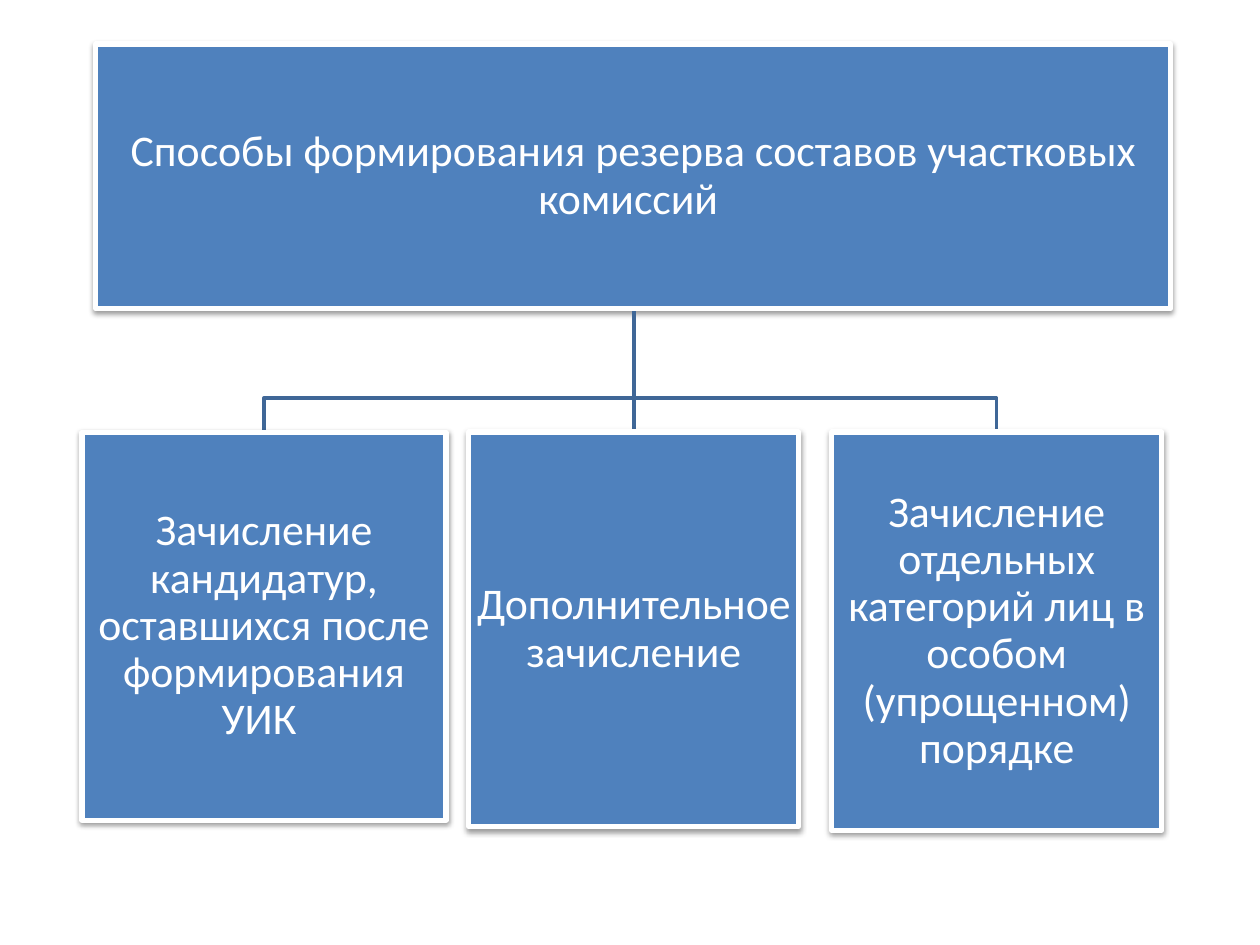
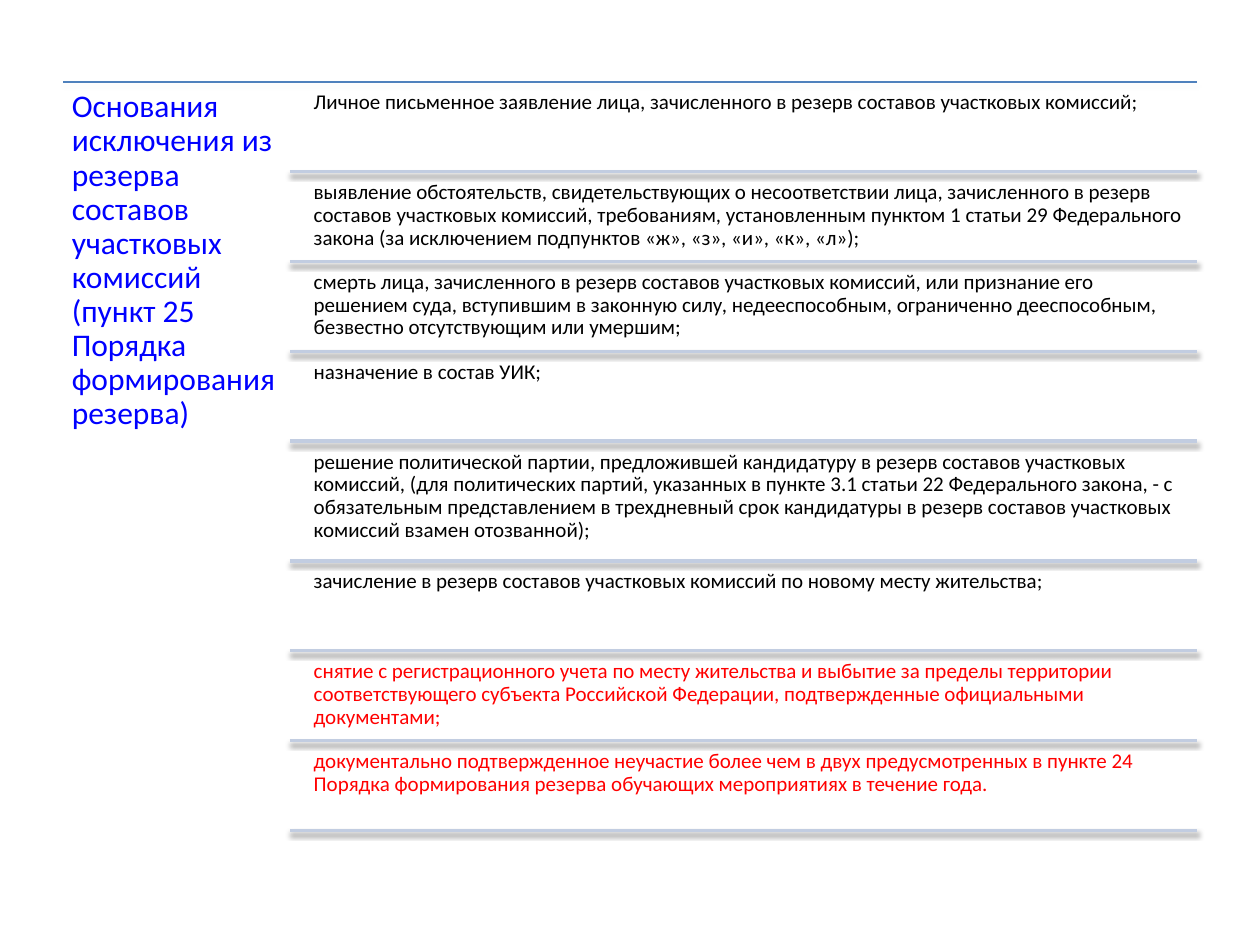
"""Build two slides on forming and leaving the reserve of precinct commissions."""
from lxml import etree
from pptx import Presentation
from pptx.dml.color import RGBColor
from pptx.enum.shapes import MSO_CONNECTOR, MSO_SHAPE
from pptx.enum.text import MSO_ANCHOR, MSO_AUTO_SIZE, PP_ALIGN
from pptx.oxml.ns import qn
from pptx.util import Inches, Pt

STRAIGHT = MSO_CONNECTOR.STRAIGHT
RECTANGLE = MSO_SHAPE.RECTANGLE
TOP, MIDDLE = MSO_ANCHOR.TOP, MSO_ANCHOR.MIDDLE
LEFT, CENTER = PP_ALIGN.LEFT, PP_ALIGN.CENTER
NO_AUTOFIT = MSO_AUTO_SIZE.NONE

FONT = "Calibri"
TITLE_ONLY = 5
COLORS = {
    "box": "4F81BD",
    "branch": "3F6797",
    "rule": "C2CDE1",
    "white": "FFFFFF",
    "black": "000000",
    "blue": "0000FF",
    "red": "FF0000",
}


def add_shadow(shape):
    effects = etree.SubElement(shape._element.spPr, qn("a:effectLst"))
    shadow = etree.SubElement(
        effects, qn("a:outerShdw"), blurRad=str(Pt(3.1)), dist=str(Pt(1.6)),
        dir="5400000", rotWithShape="0")
    color = etree.SubElement(shadow, qn("a:srgbClr"), val=COLORS["black"])
    etree.SubElement(color, qn("a:alpha"), val="38000")


def write_text(shape, text, size, color, align, anchor, margin):
    frame = shape.text_frame
    frame.word_wrap = True
    frame.auto_size = NO_AUTOFIT
    frame.vertical_anchor = anchor
    frame.margin_left = frame.margin_right = Inches(margin)
    frame.margin_top = frame.margin_bottom = Inches(margin)
    para = frame.paragraphs[0]
    para.text = text
    para.alignment = align
    para.line_spacing = 0.9
    para.font.name = FONT
    para.font.size = Pt(size)
    para.font.color.rgb = RGBColor.from_string(COLORS[color])


deck = Presentation()
deck.slide_width, deck.slide_height = Inches(10), Inches(7.5)
methods_page, grounds_page = [
    deck.slides.add_slide(deck.slide_layouts[TITLE_ONLY]) for _ in range(2)]

heading = methods_page.shapes.title
heading.left, heading.top = Inches(0.76), Inches(0.35)
heading.width, heading.height = Inches(8.53), Inches(2.1)

trunk_x, trunk_top, fork_y, methods_top = 5.03, 2.47, 3.16, 3.43
methods = [
    (0.65, 2.89, 3.08, "Зачисление кандидатур, оставшихся после формирования УИК "),
    (3.72, 2.62, 3.13, "Дополнительное зачисление"),
    (6.6, 2.62, 3.16, "Зачисление отдельных категорий лиц в особом (упрощенном) порядке"),
]

branches = [methods_page.shapes.add_connector(
    STRAIGHT, Inches(trunk_x), Inches(trunk_top), Inches(trunk_x), Inches(methods_top))]
for left, width, height, text in (methods[0], methods[-1]):
    center = left + width / 2
    outline = methods_page.shapes.build_freeform(
        Inches(trunk_x), Inches(trunk_top))
    corners = [(trunk_x, fork_y), (center, fork_y), (center, methods_top)]
    outline.add_line_segments([(Inches(x), Inches(y)) for x, y in corners], close=False)
    branch = outline.convert_to_shape()
    branch.fill.background()
    branches.append(branch)
for branch in branches:
    branch.line.color.rgb = RGBColor.from_string(COLORS["branch"])
    branch.line.width = Pt(2)
    etree.SubElement(branch._element.spPr, qn("a:effectLst"))

boxes = [(heading, "Способы формирования резерва составов участковых комиссий ")]
for left, width, height, text in methods:
    box = methods_page.shapes.add_shape(
        RECTANGLE, Inches(left), Inches(methods_top), Inches(width), Inches(height))
    boxes.append((box, text))
for box, text in boxes:
    box.fill.solid()
    box.fill.fore_color.rgb = RGBColor.from_string(COLORS["box"])
    box.line.color.rgb = RGBColor.from_string(COLORS["white"])
    box.line.width = Pt(3)
    add_shadow(box)
    write_text(box, text, 25, "white", CENTER, MIDDLE, 0.02)

list_top, list_bottom, list_right = 0.65, 6.59, 9.5
heading = grounds_page.shapes.title
heading.left, heading.top = Inches(0.5), Inches(list_top)
heading.width, heading.height = Inches(1.8), Inches(5.98)
write_text(
    heading,
    "Основания исключения из резерва составов участковых комиссий "
    "(пункт 25 Порядка формирования резерва)",
    18, "blue", LEFT, TOP, 0.07)

grounds = [
    (3, "black", "Личное письменное заявление лица, зачисленного в резерв составов "
     "участковых комиссий;"),
    (3, "black", "выявление обстоятельств, свидетельствующих о несоответствии лица, "
     "зачисленного в резерв составов участковых комиссий, требованиям, установленным "
     "пунктом 1 статьи 29 Федерального закона (за исключением подпунктов «ж», «з», "
     "«и», «к», «л»);"),
    (3, "black", "смерть лица, зачисленного в резерв составов участковых комиссий, или "
     "признание его решением суда, вступившим в законную силу, недееспособным, "
     "ограниченно дееспособным, безвестно отсутствующим или умершим;"),
    (3, "black", "назначение в состав УИК;"),
    (4, "black", "решение политической партии, предложившей кандидатуру в резерв "
     "составов участковых комиссий, (для политических партий, указанных в пункте 3.1 "
     "статьи 22 Федерального закона, - с обязательным представлением в трехдневный срок "
     "кандидатуры в резерв составов участковых комиссий взамен отозванной);"),
    (3, "black", "зачисление в резерв составов участковых комиссий по новому месту "
     "жительства;"),
    (3, "red", "снятие с регистрационного учета по месту жительства и выбытие за пределы "
     "территории соответствующего субъекта Российской Федерации, подтвержденные "
     "официальными документами;"),
    (3, "red", "документально подтвержденное неучастие более чем в двух предусмотренных "
     "в пункте 24 Порядка формирования резерва обучающих мероприятиях в течение года."),
]

line_height = (list_bottom - list_top) / sum(lines for lines, _, _ in grounds)
gap = 0.03
rules = [(0.5, list_top, "box", 0.75)]
row_top = list_top
for lines, color, text in grounds:
    row_height = lines * line_height
    box = grounds_page.shapes.add_textbox(
        Inches(2.44), Inches(row_top + gap), Inches(7.07), Inches(row_height - gap))
    write_text(box, text, 12, color, LEFT, TOP, 0.05)
    row_top += row_height
    rules.append((2.3, row_top, "rule", 2))

for left, y, color, weight in rules:
    rule = grounds_page.shapes.add_connector(
        STRAIGHT, Inches(left), Inches(y), Inches(list_right), Inches(y))
    rule.line.color.rgb = RGBColor.from_string(COLORS[color])
    rule.line.width = Pt(weight)
    add_shadow(rule)

deck.save("out.pptx")
